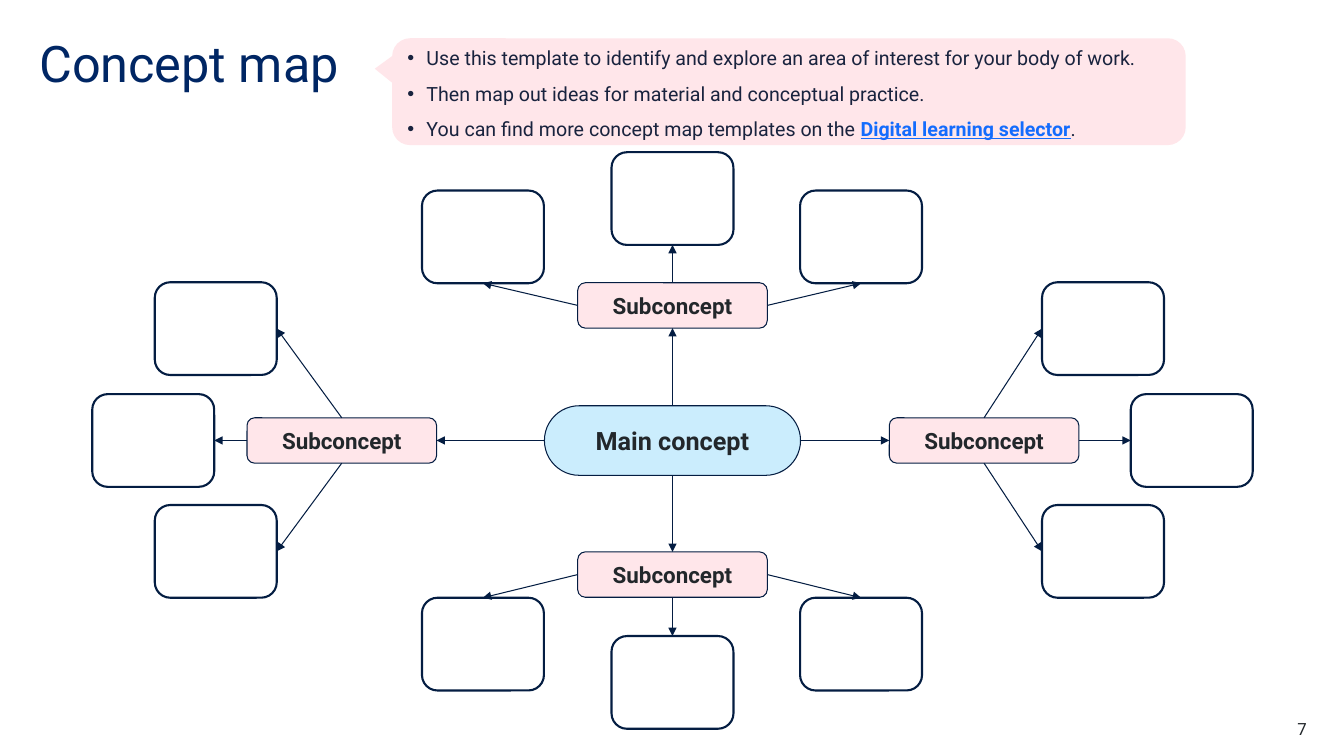
from lxml.etree import SubElement
from pptx import Presentation
from pptx.dml.color import RGBColor
from pptx.enum.shapes import MSO_CONNECTOR, MSO_SHAPE
from pptx.enum.text import MSO_ANCHOR, PP_ALIGN
from pptx.oxml.ns import qn
from pptx.util import Inches, Pt

NAVY = RGBColor(0x00, 0x26, 0x64)
DARK = RGBColor(0x04, 0x1D, 0x42)
INK = RGBColor(0x19, 0x23, 0x3E)
TEXT = RGBColor(0x22, 0x27, 0x2B)
LINK = RGBColor(0x14, 0x6C, 0xFD)
PINK = RGBColor(0xFF, 0xE6, 0xEA)
BLUE = RGBColor(0xCB, 0xED, 0xFD)
WHITE = RGBColor(0xFF, 0xFF, 0xFF)

TOP, LEFT, BOTTOM, RIGHT = range(4)
MAIN = (6.67, 4.37)
TIPS = [
    ["Use this template to identify and explore an area of interest for your body of work."],
    ["Then map out ideas for material and conceptual practice."],
    ["You can find more concept map templates on the ", "Digital learning selector", "."],
]
BRANCHES = [
    (LEFT, (3.39, 4.37), [(2.14, 3.26), (1.52, 4.37), (2.14, 5.47)]),
    (RIGHT, (9.76, 4.37), [(10.94, 5.47), (11.82, 4.37), (10.94, 3.26)]),
    (TOP, (6.67, 3.03), [(8.54, 2.35), (6.67, 1.97), (4.79, 2.35)]),
    (BOTTOM, (6.67, 5.7), [(4.79, 6.39), (6.67, 6.77), (8.54, 6.39)]),
]


def add_run(para, text, size, color, bold=False):
    """Append one styled run and return it."""
    run = para.add_run()
    run.text = text
    font = run.font
    font.name, font.size, font.bold = "Roboto", Pt(size), bold
    font.color.rgb = color
    return run


def set_pad(frame, pad):
    """Wrap the text and give it equal insets."""
    frame.word_wrap = True
    frame.margin_left = frame.margin_right = Inches(pad)
    frame.margin_top = frame.margin_bottom = Inches(pad)


def add_label(slide, area, text, size, color, align=PP_ALIGN.LEFT, space=1.0):
    """Place a plain line of text without insets."""
    frame = slide.shapes.add_textbox(*map(Inches, area)).text_frame
    set_pad(frame, 0)
    para = frame.paragraphs[0]
    para.alignment, para.line_spacing = align, space
    add_run(para, text, size, color)


def add_tips(slide):
    """Draw the callout with its bulleted tips."""
    area = map(Inches, (3.89, 0.38, 7.87, 1.06))
    shape = slide.shapes.add_shape(MSO_SHAPE.ROUNDED_RECTANGULAR_CALLOUT, *area)
    shape.shadow.inherit = False
    for index, value in enumerate((-0.522, -0.215, 0.167)):
        shape.adjustments[index] = value
    shape.fill.solid()
    shape.fill.fore_color.rgb = PINK
    shape.line.fill.background()
    frame = shape.text_frame
    frame.word_wrap = True
    frame.vertical_anchor = MSO_ANCHOR.MIDDLE
    for index, parts in enumerate(TIPS):
        para = frame.add_paragraph() if index else frame.paragraphs[0]
        props = para._p.get_or_add_pPr()
        props.set("marL", str(Inches(0.19)))
        props.set("indent", str(-Inches(0.19)))
        SubElement(props, qn("a:buFont")).set("typeface", "Arial")
        SubElement(props, qn("a:buChar")).set("char", "•")
        para.alignment = PP_ALIGN.LEFT
        para.line_spacing, para.space_after = 1.14, Pt(6)
        for place, part in enumerate(parts):
            link = place == 1
            run = add_run(para, part, 14, LINK if link else INK, link)
            run.font.underline = link


def add_node(slide, center, size, fill, text="", points=16, weight=0.75, curve=0.167):
    """Draw a rounded box around a center point."""
    (x, y), (width, height) = center, size
    area = map(Inches, (x - width / 2, y - height / 2, width, height))
    shape = slide.shapes.add_shape(MSO_SHAPE.ROUNDED_RECTANGLE, *area)
    shape.shadow.inherit = False
    shape.adjustments[0] = curve
    shape.fill.solid()
    shape.fill.fore_color.rgb = fill
    shape.line.color.rgb = DARK
    shape.line.width = Pt(weight)
    if text:
        frame = shape.text_frame
        set_pad(frame, 0.1)
        frame.vertical_anchor = MSO_ANCHOR.MIDDLE
        para = frame.paragraphs[0]
        para.alignment = PP_ALIGN.CENTER
        add_run(para, text, points, TEXT, True)
    return shape


def add_arrow(slide, start, side, end, way):
    """Join two boxes with an arrow between the given sides."""
    arrow = slide.shapes.add_connector(MSO_CONNECTOR.STRAIGHT, 0, 0, 0, 0)
    arrow.begin_connect(start, side)
    arrow.end_connect(end, way)
    arrow.line.color.rgb = DARK
    arrow.line.width = Pt(0.75)
    SubElement(arrow.line._get_or_add_ln(), qn("a:tailEnd")).set("type", "triangle")
    SubElement(arrow._element.spPr, qn("a:effectLst"))


def add_branch(slide, main, side, center, leaves):
    """Draw a subconcept on one side of the main concept with its leaves."""
    back = (side + 2) % 4
    sub = add_node(slide, center, (1.88, 0.45), PINK, "Subconcept")
    add_arrow(slide, main, side, sub, back)
    for turn, spot in enumerate(leaves, -1):
        leaf = add_node(slide, spot, (1.21, 0.92), WHITE, weight=1.5)
        add_arrow(slide, sub, (side + turn) % 4, leaf, back)


def main():
    """Build the concept map slide and save it."""
    deck = Presentation()
    deck.slide_width, deck.slide_height = Inches(13.33), Inches(7.5)
    slide = deck.slides.add_slide(deck.slide_layouts[6])
    add_label(slide, (0.39, 0.39, 3.4, 1.1), "Concept map", 36, NAVY, space=0.9)
    add_tips(slide)
    hub = add_node(slide, MAIN, (2.54, 0.69), BLUE, "Main concept", 18, curve=0.5)
    for side, center, leaves in BRANCHES:
        add_branch(slide, hub, side, center, leaves)
    add_label(slide, (12.17, 7.13, 0.79, 0.2), "7", 12, TEXT, PP_ALIGN.RIGHT)
    deck.save("out.pptx")


if __name__ == "__main__":
    main()
